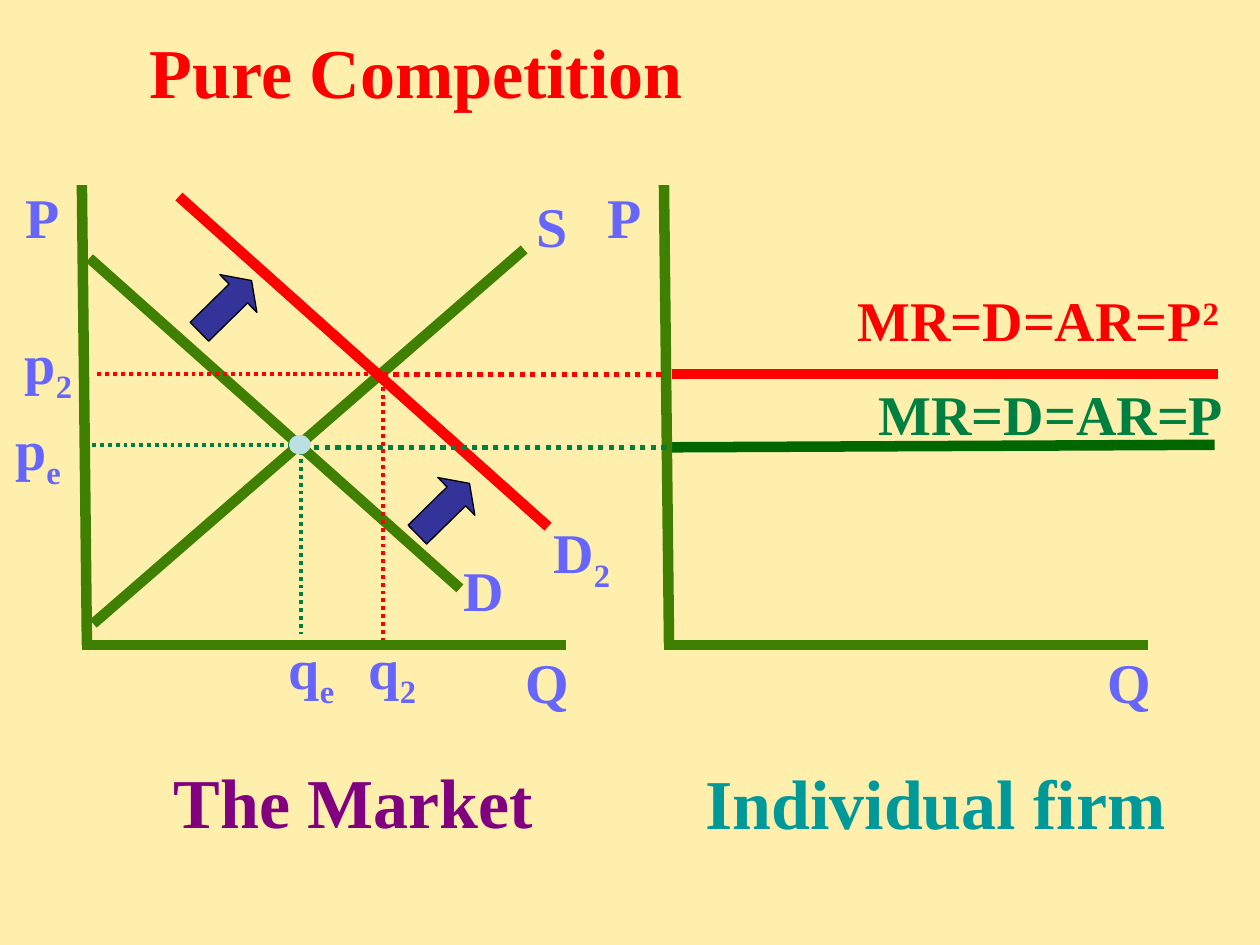
from lxml.etree import SubElement
from pptx import Presentation
from pptx.dml.color import RGBColor
from pptx.enum.dml import MSO_LINE
from pptx.enum.shapes import MSO_CONNECTOR, MSO_SHAPE
from pptx.enum.text import MSO_AUTO_SIZE, PP_ALIGN
from pptx.oxml.ns import qn
from pptx.util import Inches, Pt

FONT = "Times New Roman"
RED, GREEN, OLIVE, BLUE = "FF0000", "008040", "408000", "6666FF"


def color(code):
    return RGBColor.from_string(code)


def add_run(para, text, size, code, shift=0):
    run = para.add_run()
    run.text = text
    font = run.font
    font.name, font.size, font.bold = FONT, Pt(size), True
    font.color.rgb = color(code)
    if shift:
        run._r.get_or_add_rPr().set("baseline", str(shift * 1000))


def label(slide, x, y, width, text, code=BLUE, small="", shift=-25,
          size=32, align=PP_ALIGN.RIGHT, wrap=True):
    height = 0.77 if size == 40 else 0.63
    box = slide.shapes.add_textbox(Inches(x), Inches(y), Inches(width), Inches(height))
    frame = box.text_frame
    frame.word_wrap = wrap
    frame.auto_size = MSO_AUTO_SIZE.SHAPE_TO_FIT_TEXT
    para = frame.paragraphs[0]
    para.alignment = align
    add_run(para, text, size, code)
    if small:
        add_run(para, small, size, code, shift)


def line(slide, x1, y1, x2, y2, code=OLIVE, width=6, dots=False):
    link = slide.shapes.add_connector(
        MSO_CONNECTOR.STRAIGHT, Inches(x1), Inches(y1), Inches(x2), Inches(y2))
    link.line.color.rgb = color(code)
    link.line.width = Pt(width)
    if dots:
        link.line.dash_style = MSO_LINE.ROUND_DOT
    SubElement(link._element.spPr, qn("a:effectLst"))


def shape(slide, kind, x, y, width, height, fill, edge, weight):
    item = slide.shapes.add_shape(kind, Inches(x), Inches(y), Inches(width), Inches(height))
    item.shadow.inherit = False
    item.fill.solid()
    item.fill.fore_color.rgb = color(fill)
    item.line.color.rgb = color(edge)
    item.line.width = Pt(weight)
    return item


def arrow(slide, x, y):
    item = shape(slide, MSO_SHAPE.UP_ARROW, x, y, 0.42, 0.58, "333399", "000000", 0.75)
    item.adjustments[0], item.adjustments[1] = 0.5, 0.35
    item.rotation = 45.5


def axes(slide, x, y):
    line(slide, x, y + 3.65, x + 3.84, y + 3.65)
    line(slide, x + 0.04, y + 3.65, x, y)
    label(slide, x - 0.55, y - 0.07, 0.47, "P", wrap=False)
    label(slide, x + 3.42, y + 3.62, 0.46, "Q")


def market(slide):
    # Supply and first demand
    axes(slide, 0.65, 1.47)
    line(slide, 0.74, 4.95, 4.16, 1.98)
    line(slide, 3.65, 4.67, 0.71, 2.05)
    label(slide, 4.11, 1.47, 0.49, "S")
    label(slide, 3.58, 4.36, 0.52, "D", wrap=False)

    # First balance
    line(slide, 2.38, 3.53, 0.73, 3.53, GREEN, 2.25, True)
    line(slide, 2.39, 3.52, 2.39, 5.03, GREEN, 2.25, True)
    label(slide, 0, 3.24, 0.58, "p", small="e")
    label(slide, 2.17, 4.98, 0.58, "q", small="e")
    shape(slide, MSO_SHAPE.OVAL, 2.3, 3.46, 0.16, 0.14, "BBE0E3", "BBE0E3", 1)

    # Shifted demand and new balance
    line(slide, 4.35, 4.18, 1.42, 1.56, RED)
    label(slide, 4.27, 4.06, 0.67, "D", small="2", wrap=False)
    line(slide, 2.92, 2.97, 0.75, 2.97, RED, 2.25, True)
    line(slide, 3.04, 3.07, 3.04, 5.08, RED, 2.25, True)
    label(slide, 0, 2.56, 0.67, "p", small="2")
    label(slide, 2.72, 4.98, 0.68, "q", small="2")
    for x, y in ((3.31, 3.75), (1.58, 2.14)):
        arrow(slide, x, y)


def firm(slide):
    # Price lines carried over from the market
    label(slide, 6.46, 2.96, 3.35, "MR=D=AR=P", GREEN)
    line(slide, 5.32, 3.55, 9.64, 3.53, "006600")
    axes(slide, 5.27, 1.47)
    line(slide, 5.29, 3.55, 2.48, 3.55, GREEN, 3, True)
    line(slide, 5.25, 2.97, 3, 2.97, RED, 3, True)
    line(slide, 5.33, 2.97, 9.67, 2.97, RED)
    label(slide, 6.42, 2.22, 3.35, "MR=D=AR=P", RED, small="2", shift=30)


def main():
    deck = Presentation()
    deck.slide_width, deck.slide_height = Inches(10), Inches(7.5)
    slide = deck.slides.add_slide(deck.slide_layouts[6])
    slide.background.fill.solid()
    slide.background.fill.fore_color.rgb = color("FFEFAD")

    # Title and captions
    label(slide, 1.09, 0.18, 7.89, "Pure Competition", RED, size=40, align=PP_ALIGN.LEFT)
    label(slide, 0.83, 5.97, 3.5, "The Market", "800080", size=40)
    label(slide, 5.46, 5.98, 3.89, "Individual firm", "009999", size=40)

    # Graphs
    market(slide)
    firm(slide)
    deck.save("out.pptx")


if __name__ == "__main__":
    main()
